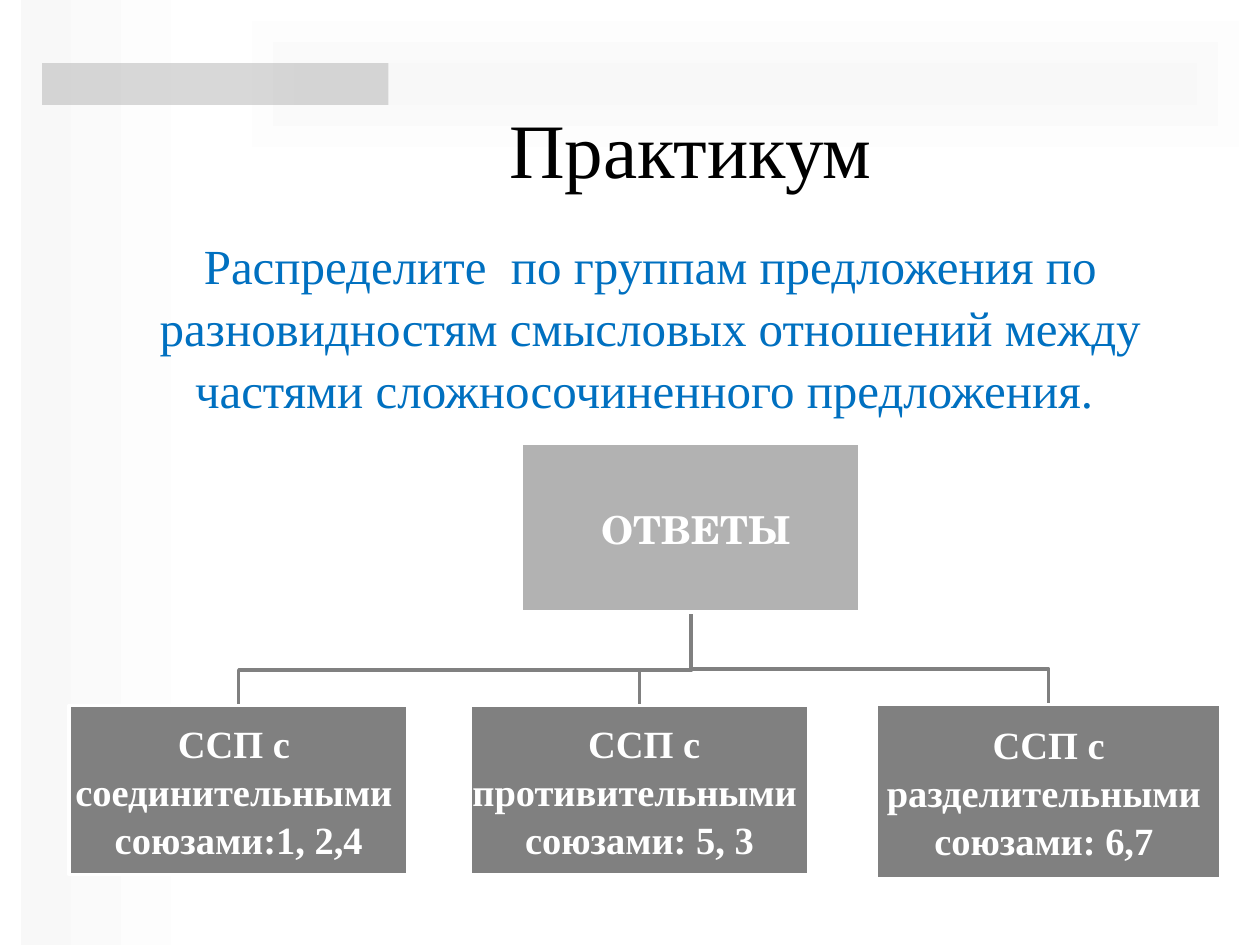
from dataclasses import dataclass

import pptx
import pptx.dml.color
import pptx.enum.shapes
import pptx.enum.text
import pptx.oxml
import pptx.oxml.ns
import pptx.util

Pt = pptx.util.Pt
COLORS = {"white": "FFFFFF", "pale": "F8F8F8", "light": "B2B2B2",
          "dark": "808080", "blue": "0070C0", "black": "000000"}
SERIF = "Times New Roman"


@dataclass
class Box:
    left: float
    top: float
    width: float
    height: float

    @property
    def mid(self) -> float:
        return self.left + self.width / 2


@dataclass
class Run:
    text: str
    size: float
    color: str
    face: str = SERIF
    bold: bool = False


@dataclass
class Node:
    box: Box
    fill: str
    lines: list[list[Run]]


def shade(name: str) -> pptx.dml.color.RGBColor:
    return pptx.dml.color.RGBColor.from_string(COLORS[name])


def place(box: Box) -> list[int]:
    return [Pt(v) for v in (box.left, box.top, box.width, box.height)]


def add_rect(slide, box: Box):
    shape = slide.shapes.add_shape(
        pptx.enum.shapes.MSO_SHAPE.RECTANGLE, *place(box))
    shape.shadow.inherit = False
    shape.line.fill.background()
    return shape


def add_fade(slide, box: Box, center: bool = False) -> None:
    """Draw a pale fade, to the right or outward from the center."""
    fill = add_rect(slide, box).fill
    fill.gradient()
    fill.gradient_angle = 0
    for stop, name in zip(fill.gradient_stops, ("pale", "white")):
        stop.color.rgb = shade(name)
    if center:
        props = slide.shapes[-1]._element.spPr
        line = props.find(".//" + pptx.oxml.ns.qn("a:lin"))
        line.getparent().replace(line, pptx.oxml.parse_xml(
            f'<a:path {pptx.oxml.ns.nsdecls("a")} path="shape">'
            '<a:fillToRect l="50000" t="50000" r="50000" b="50000"/></a:path>'))


def add_bar(slide, box: Box) -> None:
    """Draw the half-transparent gray bar."""
    bar = add_rect(slide, box)
    bar.fill.solid()
    bar.fill.fore_color.rgb = shade("light")
    tone = bar._element.spPr.find(".//" + pptx.oxml.ns.qn("a:srgbClr"))
    tone.append(pptx.oxml.parse_xml(
        f'<a:alpha {pptx.oxml.ns.nsdecls("a")} val="50000"/>'))


def write(frame, lines: list[list[Run]], anchor: str, space: float = 1.0) -> None:
    frame.word_wrap = True
    frame.vertical_anchor = pptx.enum.text.MSO_ANCHOR[anchor]
    for i, runs in enumerate(lines):
        para = frame.add_paragraph() if i else frame.paragraphs[0]
        para.alignment = pptx.enum.text.PP_ALIGN.CENTER
        para.line_spacing = space
        for item in runs:
            run = para.add_run()
            run.text = item.text
            run.font.name = item.face
            run.font.size = Pt(item.size)
            run.font.bold = item.bold
            run.font.color.rgb = shade(item.color)


def add_text(slide, box: Box, run: Run, anchor: str, space: float = 1.0) -> None:
    frame = slide.shapes.add_textbox(*place(box)).text_frame
    write(frame, [[run]], anchor, space)


def add_node(slide, node: Node) -> None:
    shape = add_rect(slide, node.box)
    shape.fill.solid()
    shape.fill.fore_color.rgb = shade(node.fill)
    shape.line.color.rgb = shade("white")
    shape.line.width = Pt(2)
    frame = shape.text_frame
    frame.margin_left = frame.margin_right = Pt(1.2)
    frame.margin_top = frame.margin_bottom = Pt(1.2)
    write(frame, node.lines, "MIDDLE", 1.04)


def add_link(slide, root: Box, leaf: Box) -> None:
    """Draw the bent line from the root down to a leaf."""
    start = root.top + root.height
    bend = leaf.top - 20.2
    draw = slide.shapes.build_freeform(Pt(root.mid), Pt(start))
    draw.add_line_segments([(Pt(x), Pt(y)) for x, y in (
        (root.mid, bend), (leaf.mid, bend), (leaf.mid, leaf.top))], close=False)
    link = draw.convert_to_shape()
    link.shadow.inherit = False
    link.fill.background()
    link.line.color.rgb = shade("dark")
    link.line.width = Pt(2)


def leaf(box: Box, *lines: str) -> Node:
    return Node(box, "dark", [[Run(t, 22, "white", bold=True)] for t in lines])


ROOT = Node(Box(298, 253.4, 193.6, 96.5), "light", [
    [Run(" ", 22, "white", "Arial"),
     Run("ОТВЕТЫ", 22, "white", "TeX Gyre Schola", True)]])
LEAVES = [
    leaf(Box(39.6, 403.2, 193.6, 96.5),
         "ССП с ", "соединительными ", "союзами:1, 2,4"),
    leaf(Box(268.6, 403.2, 193.6, 96.5),
         " ССП с", "противительными ", "союзами: 5, 3"),
    leaf(Box(500.6, 402.5, 197.3, 99.4),
         "ССП с", "разделительными ", "союзами: 6,7 "),
]


def main() -> None:
    deck = pptx.Presentation()
    deck.slide_width, deck.slide_height = Pt(720), Pt(540)
    slide = deck.slides.add_slide(deck.slide_layouts[6])
    add_fade(slide, Box(12, 0, 114, 540))
    add_fade(slide, Box(132, 0, 588, 96), center=True)
    add_bar(slide, Box(24, 36, 198, 24))
    add_text(slide, Box(118, 67.7, 564, 46.8),
             Run("Практикум ", 44, "black"), "BOTTOM")
    add_text(slide, Box(39.6, 129.6, 663.8, 108.7),
             Run("Распределите  по группам предложения по разновидностям "
                 "смысловых отношений между частями сложносочиненного "
                 "предложения. ", 28, "blue"), "TOP", 1.05)
    for node in reversed(LEAVES):
        add_link(slide, ROOT.box, node.box)
    for node in [ROOT, *LEAVES]:
        add_node(slide, node)
    deck.save("out.pptx")


if __name__ == "__main__":
    main()
